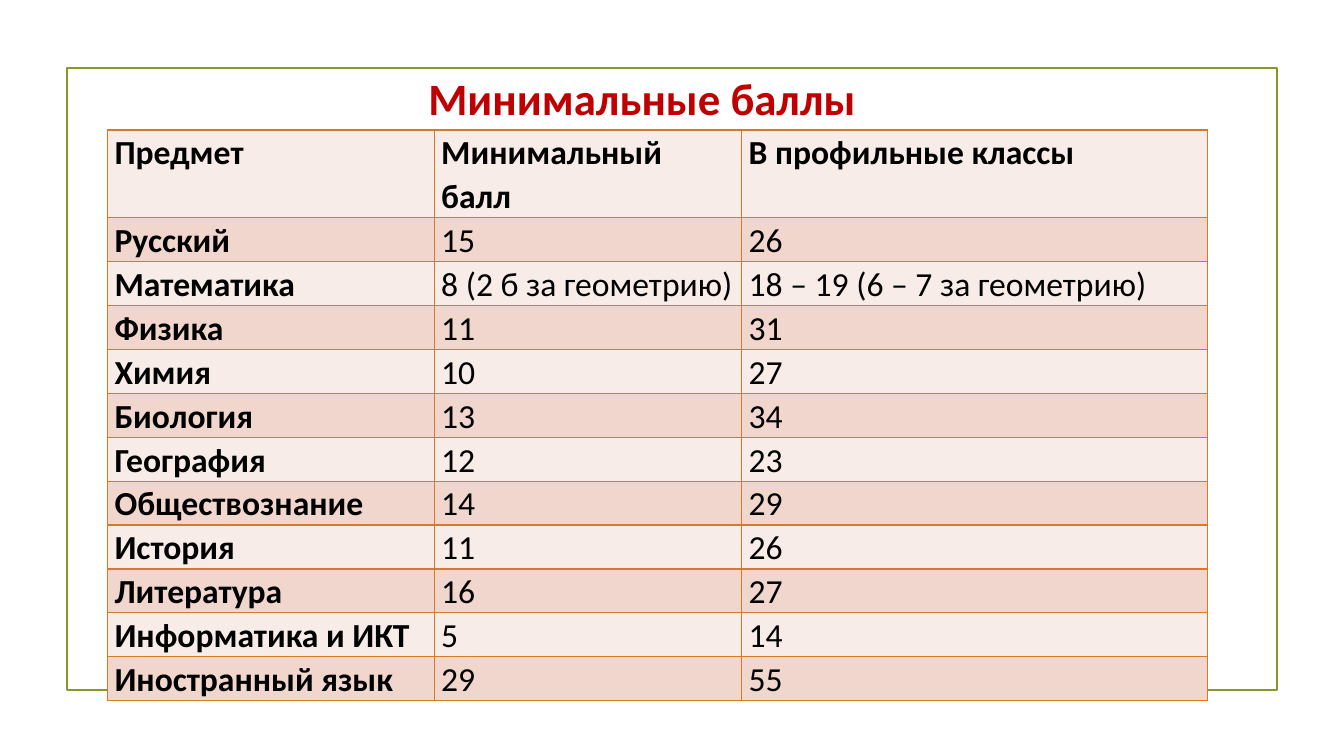
import dataclasses

import pptx
import pptx.dml.color
import pptx.enum.shapes
import pptx.enum.text
import pptx.oxml
import pptx.oxml.ns
import pptx.util

Inches, Pt = pptx.util.Inches, pptx.util.Pt


@dataclasses.dataclass(frozen=True)
class Theme:
    """Colours and type sizes of the slide."""
    font: str = "Calibri"
    title_size: int = 32
    cell_size: int = 24
    title: str = "C00000"
    text: str = "000000"
    frame: str = "83992A"
    border: str = "D97828"
    bands: tuple = ("F8ECE8", "F1D6CD")


THEME = Theme()
WIDTH, HEIGHT = 13.33, 7.5
COLUMNS = (3.24, 3.05, 4.62)
ROW = 0.36
SCORES = (
    ("Предмет", "Минимальный балл", "В профильные классы"),
    ("Русский", "15", "26"),
    ("Математика", "8 (2 б за геометрию)", "18 – 19 (6 – 7 за геометрию)"),
    ("Физика", "11", "31"),
    ("Химия", "10", "27"),
    ("Биология", "13", "34"),
    ("География", "12", "23"),
    ("Обществознание", "14", "29"),
    ("История", "11", "26"),
    ("Литература", "16", "27"),
    ("Информатика и ИКТ", "5", "14"),
    ("Иностранный язык", "29", "55"),
)


def rgb(value):
    """Return a colour object for a hex string."""
    return pptx.dml.color.RGBColor.from_string(value)


def style(p, size, color, bold):
    """Set the font of a paragraph."""
    p.font.name, p.font.size, p.font.bold = THEME.font, Pt(size), bold
    p.font.color.rgb = rgb(color)


def add_frame(s, box):
    """Draw the thin outline around the content."""
    sp = s.shapes.add_shape(pptx.enum.shapes.MSO_SHAPE.RECTANGLE, *map(Inches, box))
    sp.shadow.inherit = False
    sp.fill.background()
    sp.line.color.rgb = rgb(THEME.frame)
    sp.line.width = Pt(1.25)


def add_title(s, box, text):
    """Place the title placeholder in its box."""
    sp = s.shapes.title
    sp.left, sp.top, sp.width, sp.height = map(Inches, box)
    tf = sp.text_frame
    tf.text = text
    tf.word_wrap = True
    tf.auto_size = pptx.enum.text.MSO_AUTO_SIZE.NONE
    p = tf.paragraphs[0]
    p.alignment = pptx.enum.text.PP_ALIGN.CENTER
    style(p, THEME.title_size, THEME.title, True)


def add_borders(cell):
    """Outline all four sides of a cell."""
    tcPr = cell._tc.get_or_add_tcPr()
    for side in "LRTB":
        tcPr.append(pptx.oxml.parse_xml(
            f'<a:ln{side} {pptx.oxml.ns.nsdecls("a")} w="{Pt(1)}"><a:solidFill>'
            f'<a:srgbClr val="{THEME.border}"/></a:solidFill></a:ln{side}>'))


def fill_cell(cell, text, band, bold):
    """Write one cell with its borders, fill and text."""
    add_borders(cell)
    cell.fill.solid()
    cell.fill.fore_color.rgb = rgb(band)
    cell.margin_left = cell.margin_right = Inches(0.07)
    cell.margin_top = cell.margin_bottom = 0
    cell.text = text
    p = cell.text_frame.paragraphs[0]
    p.line_spacing = 1.07
    p.space_after = Pt(8)
    style(p, THEME.cell_size, THEME.text, bold)


def add_scores(s, left, top):
    """Build the table of scores from its top left corner."""
    box = (left, top, sum(COLUMNS), ROW * len(SCORES))
    table = s.shapes.add_table(len(SCORES), len(COLUMNS), *map(Inches, box)).table
    table.first_row = table.horz_banding = False
    for column, width in zip(table.columns, COLUMNS):
        column.width = Inches(width)
    for i, row in enumerate(SCORES):
        for j, text in enumerate(row):
            fill_cell(table.cell(i, j), text, THEME.bands[i % 2], i == 0 or j == 0)


def main():
    """Build and save the presentation."""
    prs = pptx.Presentation()
    prs.slide_width, prs.slide_height = Inches(WIDTH), Inches(HEIGHT)
    s = prs.slides.add_slide(prs.slide_layouts[5])
    add_frame(s, (0.05 * WIDTH, 0.09 * HEIGHT, 0.9 * WIDTH, 6.17))
    add_scores(s, 0.08 * WIDTH, 1.29)
    add_title(s, (0.75, 0.65, 11.24, 0.64), "Минимальные баллы")
    prs.save("out.pptx")


if __name__ == "__main__":
    main()
